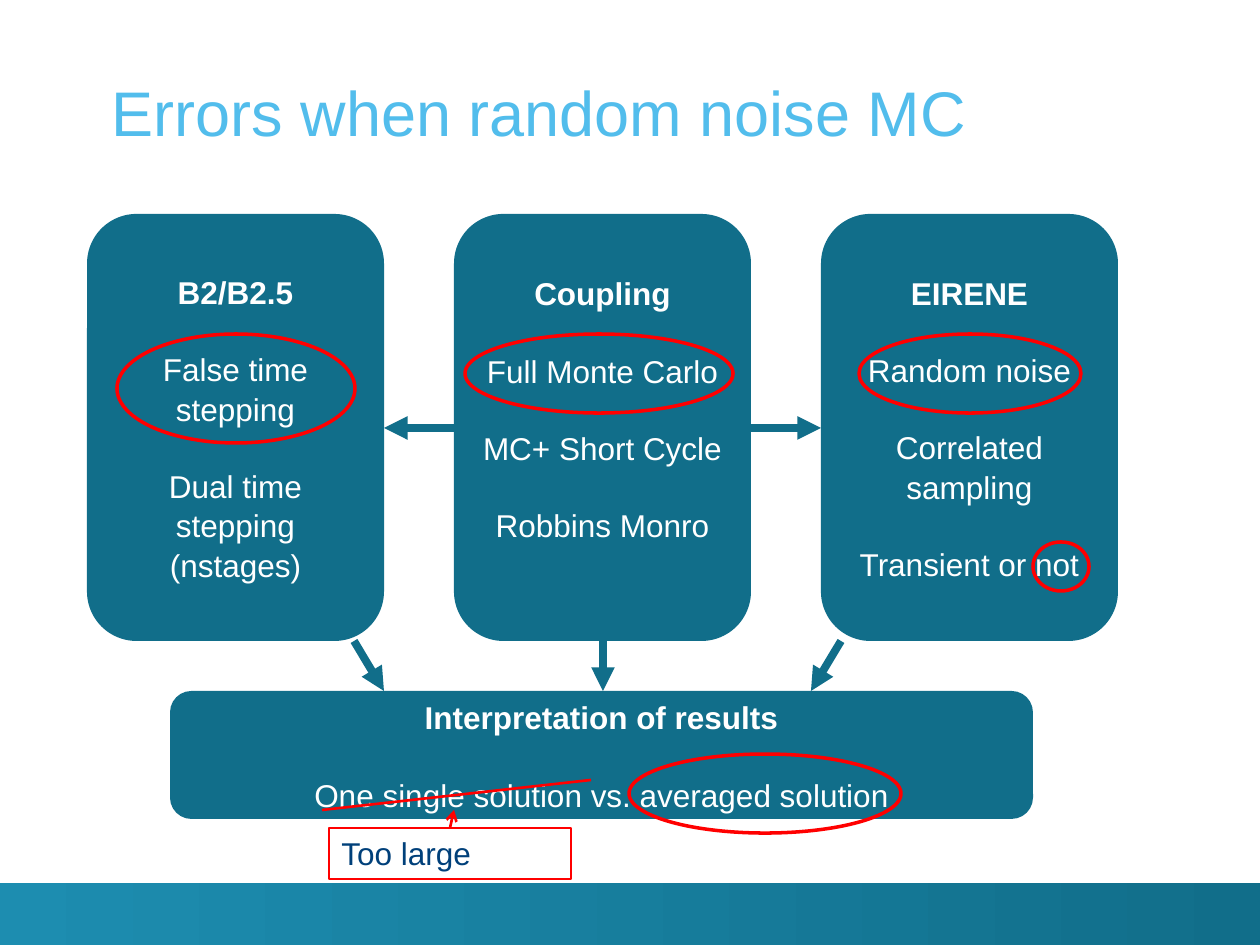
import pptx
import pptx.util
import pptx.dml.color
import pptx.enum.shapes
import pptx.enum.text
import pptx.oxml.ns
import lxml.etree

EMU_PER_PX = 914400 / 126
FONT = "Arial"
TEAL, RED, WHITE = "116E8A", "FF0000", "FFFFFF"
SKY, NAVY, FOOTER_START = "52BDEC", "00407A", "1D8DB0"
SHAPES = pptx.enum.shapes.MSO_SHAPE
ANCHOR = pptx.enum.text.MSO_ANCHOR
ALIGN = pptx.enum.text.PP_ALIGN

COLUMN_LEFT, COLUMN_PITCH = 87, 367
COLUMN_TOP, COLUMN_WIDTH, COLUMN_HEIGHT = 214, 297, 427
LINE_HEIGHT = 38
COLUMNS = [
    ["B2/B2.5", "False time stepping", "Dual time stepping (nstages)"],
    ["Coupling", "Full Monte Carlo", "MC+ Short Cycle", "Robbins Monro"],
    ["EIRENE", "Random noise", "Correlated sampling", "Transient or not"],
]
RESULTS = ["Interpretation of results", "One single solution vs. averaged solution"]
HIGHLIGHTS = [
    (117, 334, 238, 109),
    (465, 334, 268, 79),
    (859, 334, 222, 79),
    (629, 754, 272, 79),
    (1033, 542, 56, 49),
]
DOWN_ARROWS = [
    ((354, 641), (384, 691)),
    ((603, 641), (603, 691)),
    ((841, 641), (811, 691)),
]


def px(value):
    return pptx.util.Emu(round(value * EMU_PER_PX))


def color(value):
    return pptx.dml.color.RGBColor.from_string(value)


def set_attributes(target, values):
    for name, value in values.items():
        setattr(target, name, value)


def add_shape(slide, kind, box, fill=None, line=None, line_width=2):
    shape = slide.shapes.add_shape(kind, *map(px, box))
    shape.shadow.inherit = False
    if fill:
        shape.fill.solid()
        shape.fill.fore_color.rgb = color(fill)
    else:
        shape.fill.background()
    if line:
        shape.line.color.rgb = color(line)
        shape.line.width = pptx.util.Pt(line_width)
    else:
        shape.line.fill.background()
    return shape


def write_text(shape, text, size, text_color, frame_format, bold=False):
    """Write a single left-aligned paragraph."""
    set_attributes(shape.text_frame, {"word_wrap": True, **frame_format})
    paragraph = shape.text_frame.paragraphs[0]
    paragraph.text = text
    paragraph.alignment = ALIGN.LEFT
    set_attributes(paragraph.font, {"name": FONT, "size": pptx.util.Pt(size), "bold": bold})
    paragraph.font.color.rgb = color(text_color)


def add_panel(slide, box, lines, bottom_inset=6):
    """Add a rounded panel with a bold heading and spaced items."""
    shape = add_shape(slide, SHAPES.ROUNDED_RECTANGLE, box, TEAL)
    frame = shape.text_frame
    set_attributes(frame, {
        "word_wrap": True,
        "vertical_anchor": ANCHOR.MIDDLE,
        "margin_bottom": px(bottom_inset),
    })
    for index, text in enumerate(lines):
        paragraph = frame.add_paragraph() if index else frame.paragraphs[0]
        paragraph.text = text
        set_attributes(paragraph, {
            "alignment": ALIGN.CENTER,
            "line_spacing": 1.04,
            "space_before": px(LINE_HEIGHT if index else 0),
        })
        set_attributes(paragraph.font, {
            "name": FONT, "size": pptx.util.Pt(18), "bold": index == 0,
        })
        paragraph.font.color.rgb = color(WHITE)


def add_line(slide, start, end, line_color, width, head=None, tail=None):
    line = slide.shapes.add_connector(
        pptx.enum.shapes.MSO_CONNECTOR.STRAIGHT, *map(px, start + end))
    line.line.color.rgb = color(line_color)
    line.line.width = pptx.util.Pt(width)
    properties = line.line._get_or_add_ln()
    for tag, kind in (("a:headEnd", head), ("a:tailEnd", tail)):
        if kind:
            lxml.etree.SubElement(properties, pptx.oxml.ns.qn(tag), type=kind)
    lxml.etree.SubElement(line._element.spPr, pptx.oxml.ns.qn("a:effectLst"))


def add_footer(slide):
    footer = add_shape(slide, SHAPES.RECTANGLE, (0, 883, 1260, 62))
    footer.fill.gradient()
    footer.fill.gradient_angle = 0
    for stop, (position, value) in zip(
            footer.fill.gradient_stops, ((0, FOOTER_START), (1, TEAL))):
        stop.position = position
        stop.color.rgb = color(value)


def add_title(slide, text):
    title = slide.shapes.add_textbox(*map(px, (112, 25, 1148, 124)))
    margins = dict.fromkeys(
        ("margin_left", "margin_top", "margin_right", "margin_bottom"), 0)
    write_text(title, text, 36, SKY, {"vertical_anchor": ANCHOR.BOTTOM, **margins})


def main():
    presentation = pptx.Presentation()
    set_attributes(presentation, {"slide_width": px(1260), "slide_height": px(945)})
    slide = presentation.slides.add_slide(presentation.slide_layouts[6])

    add_footer(slide)
    add_title(slide, "Errors when random noise MC")

    # Three method columns, joined by a double arrow behind the middle one
    add_line(slide, (384, 428), (821, 428), TEAL, 4.5, "triangle", "triangle")
    for index, lines in enumerate(COLUMNS):
        left = COLUMN_LEFT + index * COLUMN_PITCH
        # The shorter middle text is raised so the headings line up
        bottom_inset = 6 + LINE_HEIGHT if index == 1 else 6
        add_panel(slide, (left, COLUMN_TOP, COLUMN_WIDTH, COLUMN_HEIGHT),
                  lines, bottom_inset)

    # Results panel and the arrows leading to it
    add_panel(slide, (170, 691, 863, 128), RESULTS)
    for start, end in DOWN_ARROWS:
        add_line(slide, start, end, TEAL, 4.5, tail="triangle")

    # Red highlights, strike-through and note
    for box in HIGHLIGHTS:
        add_shape(slide, SHAPES.OVAL, box, line=RED)
    add_line(slide, (322, 810), (591, 780), RED, 1.5)
    note = add_shape(slide, SHAPES.RECTANGLE, (329, 828, 242, 51), line=RED, line_width=1.5)
    write_text(note, "Too large", 18, NAVY, {"vertical_anchor": ANCHOR.TOP})
    add_line(slide, (450, 828), (454, 810), RED, 1.5, tail="arrow")

    presentation.save("out.pptx")


if __name__ == "__main__":
    main()
